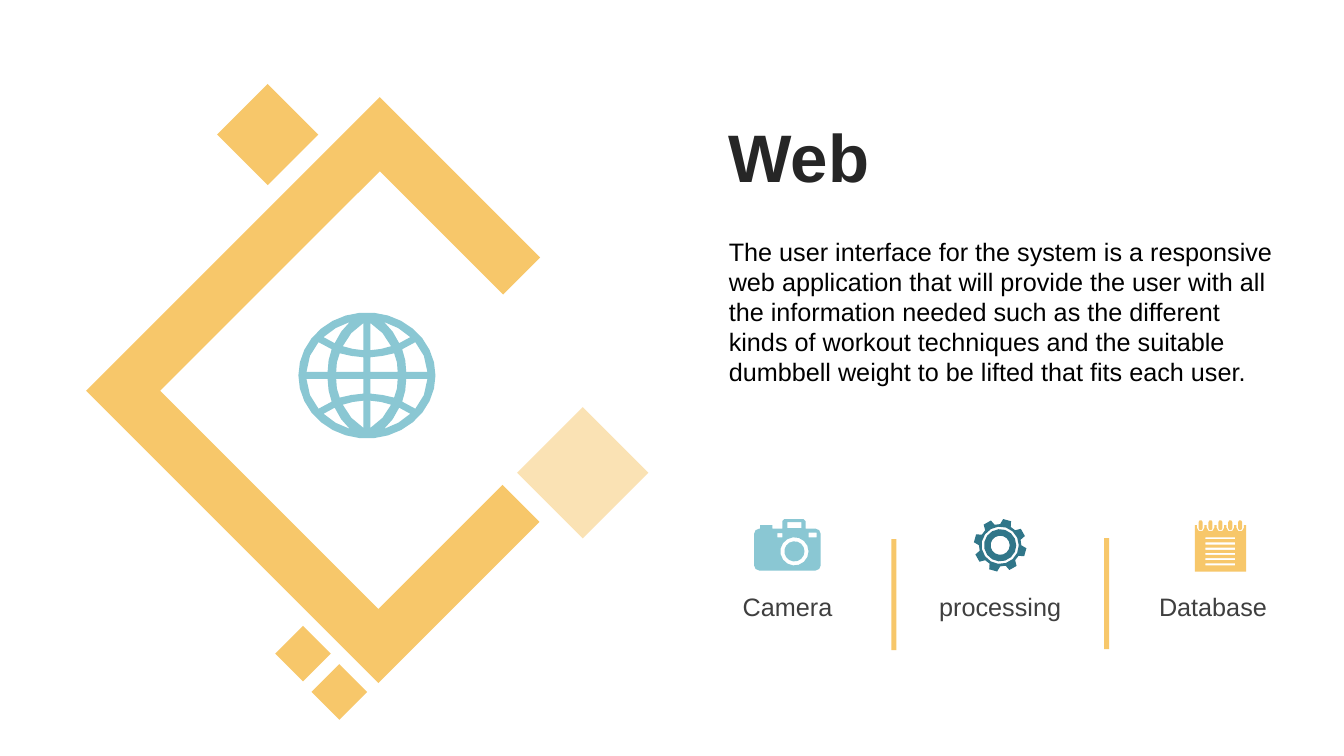
from math import cos, radians, sin

from lxml import etree
from pptx import Presentation
from pptx.dml.color import RGBColor
from pptx.enum.shapes import MSO_SHAPE
from pptx.enum.text import MSO_ANCHOR, MSO_AUTO_SIZE, PP_ALIGN
from pptx.oxml.ns import qn
from pptx.util import Emu, Inches, Pt

RECT = MSO_SHAPE.RECTANGLE
LEFT, CENTER = PP_ALIGN.LEFT, PP_ALIGN.CENTER
TOP, MIDDLE = MSO_ANCHOR.TOP, MSO_ANCHOR.MIDDLE
GROW = MSO_AUTO_SIZE.SHAPE_TO_FIT_TEXT

COLORS = {
    "gold": "F7C76A", "sky": "8AC7D3", "teal": "307689",
    "title": "262626", "body": "000000", "caption": "3F3F3F",
}
FONT = "Arial"
BODY = ("The user interface for the system is a responsive web application that "
        "will provide the user with all the information needed such as the "
        "different kinds of workout techniques and the suitable dumbbell weight "
        "to be lifted that fits each user.")
CAPTIONS = ["Camera", "processing", "Database"]

# The slide is a grid of square cells, 75 rows high
SLIDE_W, SLIDE_H = Inches(13.33), Inches(7.5)
CELL = SLIDE_H / 75


def grid(n):
    return Emu(round(n * CELL))


def paint(sp, color, alpha=None):
    sp.shadow.inherit = False
    sp.fill.solid()
    sp.fill.fore_color.rgb = RGBColor.from_string(COLORS[color])
    sp.line.fill.background()
    if alpha is not None:
        clr = sp.element.spPr.find(qn("a:solidFill"))[0]
        etree.SubElement(clr, qn("a:alpha")).set("val", str(alpha * 1000))


def add_block(s, x, y, w, h, rotation=0, alpha=None):
    sp = s.shapes.add_shape(RECT, grid(x), grid(y), grid(w), grid(h))
    sp.rotation = rotation
    paint(sp, "gold", alpha)


def add_outline(s, contours, color, rotation=0):
    """One freeform from closed contours; inner contours become holes."""
    pts = [[(grid(x), grid(y)) for x, y in c] for c in contours]
    fb = s.shapes.build_freeform(*pts[0][0])
    for i, contour in enumerate(pts):
        if i:
            fb.move_to(*contour[0])
        fb.add_line_segments(contour[1:], close=True)
    sp = fb.convert_to_shape()
    sp.rotation = rotation
    paint(sp, color)


def add_text(s, text, x, y, w, h, size, color, bold=False, align=LEFT,
             anchor=TOP, inset=1):
    tf = s.shapes.add_textbox(grid(x), grid(y), grid(w), grid(h)).text_frame
    tf.word_wrap = True
    tf.auto_size = GROW
    tf.vertical_anchor = anchor
    tf.margin_left = tf.margin_right = grid(inset)
    tf.text = text
    p = tf.paragraphs[0]
    p.alignment = align
    f = p.runs[0].font
    f.name, f.size, f.bold = FONT, Pt(size), bold
    f.color.rgb = RGBColor.from_string(COLORS[color])


# Contours, all in grid cells
def box(x1, y1, x2, y2):
    return [(x1, y1), (x2, y1), (x2, y2), (x1, y2)]


def polar(cx, cy, rx, ry, deg):
    return cx + rx * cos(radians(deg)), cy + ry * sin(radians(deg))


def arc(cx, cy, r, start, end, step):
    stop = end + (1 if step > 0 else -1)
    return [polar(cx, cy, r, r, a) for a in range(start, stop, step)]


def ring(cx, cy, rx, ry, step=24):
    return [polar(cx, cy, rx, ry, a) for a in range(0, 360, step)]


# Icons
def add_globe(s, cx, cy):
    panes = [
        [(3.2, 3.2), (2.55, 4.35), (1.7, 5.3), (3.1, 4.7), (4.3, 3.8)],
        [(.35, 2.5), (.35, 5.2), (1.55, 4.2), (2.4, 2.9), (1.4, 2.63)],
        [(.35, .35), (.35, 1.8), (1.55, 1.94), (2.7, 2.2), (2.98, 1.3),
         (3.05, .35)],
        [(3.9, .35), (3.8, 1.5), (3.5, 2.6), (4.8, 3.3), (5.65, 1.95),
         (6, .35)],
    ]
    mirrored = [[(cx + mx * x, cy + my * y) for x, y in pane]
                for mx in (1, -1) for my in (1, -1) for pane in panes]
    add_outline(s, [ring(cx, cy, 6.8, 6.25, 12)] + mirrored, "sky")


def add_camera(s, x, y):
    body = (arc(x + 6.1, y + 1.45, .5, -90, 0, 45)
            + arc(x + 6.1, y + 4.6, .5, 0, 90, 45)
            + arc(x + .5, y + 4.6, .5, 90, 180, 45)
            + arc(x + .5, y + 1.45, .5, 180, 270, 45))
    top = [(.6, .95), (.6, .6), (1.8, .6), (1.8, .95), (2.8, .95),
           (2.8, .2), (3, 0), (4.9, 0), (5.1, .2), (5.1, .95)]
    body += [(x + dx, y + dy) for dx, dy in top]
    lens = [ring(x + 4, y + 3.2, r, r) for r in (1.4, 1)]
    windows = [box(x + 2.3, y + 1.4, x + 2.8, y + 1.8),
               box(x + 5.4, y + 1.35, x + 6.2, y + 1.8),
               box(x + 3.3, y + .3, x + 4.7, y + .9)]
    add_outline(s, [body] + lens + windows, "sky")


def add_gear(s, cx, cy):
    tooth = [(0, 2.1), (6.5, 2.62), (24.5, 2.62), (30, 2.1)]
    rim = [polar(cx, cy, r, r, 45 * i + a) for i in range(8) for a, r in tooth]
    rings = [ring(cx, cy, r, r) for r in (1.85, 1.6, .95)]
    add_outline(s, [rim] + rings, "teal")


def add_notepad(s, x, y):
    ring_xs = [x + .58 + .98 * i for i in range(5)]
    page = [(x, y + .5)]
    for rx in ring_xs:
        page.append((rx - .38, y + .5))
        page += arc(rx, y + .75, .38, 180, 0, -60)
        page.append((rx + .38, y + .5))
    page += [(x + 5.1, y + .5), (x + 5.1, y + 5.1), (x, y + 5.1)]
    rules = [box(x + 1.05, y + 1.7 + .52 * i, x + 4, y + 1.9 + .52 * i)
             for i in range(6)]
    rings = [arc(rx, y + .2, .2, 180, 360, 60)
             + arc(rx, y + .8, .2, 0, 180, 60) for rx in ring_xs]
    add_outline(s, [page] + rules + rings, "gold")


def main():
    prs = Presentation()
    prs.slide_width, prs.slide_height = SLIDE_W, SLIDE_H
    s = prs.slides.add_slide(prs.slide_layouts[6])

    # Diamonds and the open frame
    for x, y, side, alpha in [(23, 9.8, 7.1, None), (31.7, 66.7, 3.9, None),
                              (28.1, 62.9, 3.9, None), (53.2, 42.3, 9.2, 50)]:
        add_block(s, x, y, side, side, 45, alpha)
    frame = [(17.1, 18.1), (39.6, 18.1), (39.6, 23.3), (22.3, 23.3),
             (22.3, 54.1), (52.9, 54.1), (52.9, 36.7), (58.1, 36.7),
             (58.1, 59.3), (17.1, 59.3)]
    add_outline(s, [frame], "gold", 45)

    # Heading and description
    add_text(s, "Web", 71.3, 10.9, 58.8, 9.1, 48, "title", True, anchor=MIDDLE)
    add_text(s, BODY, 71.3, 22.9, 56.1, 16.2, 18, "body")

    # Three captioned columns with separators
    for i, caption in enumerate(CAPTIONS):
        add_text(s, caption, 70 + 21.1 * i, 58.2, 16.2, 4, 18, "caption",
                 align=CENTER, inset=1.2)
    for i in range(2):
        add_block(s, 88.4 + 21.1 * i, 53.5 - .1 * i, .5, 11)

    add_globe(s, 36.4, 37.25)
    add_camera(s, 74.8, 51.5)
    add_gear(s, 99.2, 54.1)
    add_notepad(s, 118.5, 51.6)

    prs.save("out.pptx")


if __name__ == "__main__":
    main()
